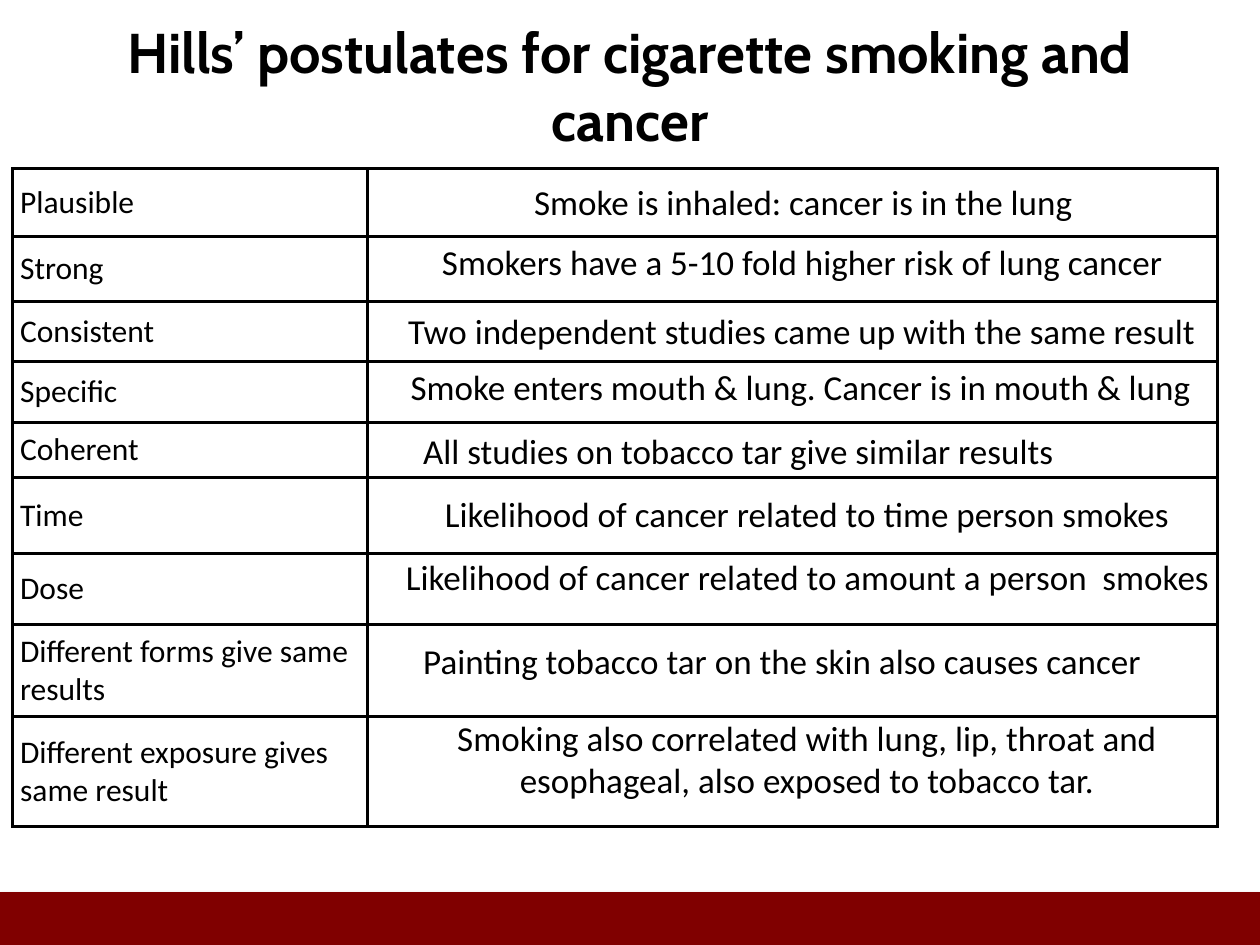
import pptx
import pptx.dml.color
import pptx.enum.shapes
import pptx.enum.text
import pptx.oxml
import pptx.oxml.ns
import pptx.util

Inches = pptx.util.Inches
Pt = pptx.util.Pt
ALIGN = pptx.enum.text.PP_ALIGN
ANCHOR = pptx.enum.text.MSO_ANCHOR

COLORS = {"text": "000000", "border": "000000", "paper": "FFFFFF", "footer": "800000"}
COLUMNS = [2.82, 6.74]
POSTULATES = [
    ("Plausible", 0.54),
    ("Strong", 0.51),
    ("Consistent", 0.48),
    ("Specific", 0.48),
    ("Coherent", 0.44),
    ("Time", 0.6),
    ("Dose", 0.57),
    ("Different forms give same results", 0.63),
    ("Different exposure gives same result", 0.87),
]
EVIDENCE = [
    ("Smoke is inhaled: cancer is in the lung", (4.14, 1.38, 4.52, 0.44), ALIGN.LEFT, False),
    ("Smokers have a 5-10 fold higher risk of lung cancer", (3.41, 1.86, 6, 0.44), ALIGN.LEFT, False),
    ("Two independent studies came up with the same result", (3.14, 2.41, 6.53, 0.44), ALIGN.LEFT, False),
    ("Smoke enters mouth & lung. Cancer is in mouth & lung", (3.16, 2.85, 6.49, 0.44), ALIGN.LEFT, True),
    ("All studies on tobacco tar give similar results", (3.26, 3.36, 6.29, 0.44), ALIGN.LEFT, True),
    ("Likelihood of cancer related to time person smokes", (3.26, 3.86, 6.29, 0.44), ALIGN.CENTER, True),
    ("Likelihood of cancer related to amount a person  smokes", (3.08, 4.36, 6.66, 0.44), ALIGN.CENTER, True),
    ("Painting tobacco tar on the skin also causes cancer", (3.26, 5.03, 6.29, 0.44), ALIGN.LEFT, True),
    ("Smoking also correlated with lung, lip, throat and esophageal, also exposed to tobacco tar.",
     (3.26, 5.64, 6.29, 0.77), ALIGN.CENTER, True),
]


def rgb(name):
    return pptx.dml.color.RGBColor.from_string(COLORS[name])


def write(tf, text, size=20, font="Calibri", color="text", bold=False, align=ALIGN.LEFT):
    p = tf.paragraphs[0]
    p.alignment = align
    r = p.add_run()
    r.text = text
    r.font.size = Pt(size)
    r.font.name = font
    r.font.bold = bold
    r.font.color.rgb = rgb(color)


class Deck:
    def __init__(self, s):
        self.s = s

    def title(self, text, box):
        sp = self.s.shapes.title
        sp.left, sp.top, sp.width, sp.height = map(Inches, box)
        tf = sp.text_frame
        tf.word_wrap = True
        tf.auto_size = pptx.enum.text.MSO_AUTO_SIZE.NONE
        tf.vertical_anchor = ANCHOR.MIDDLE
        write(tf, text, size=32, font="Cabin", bold=True, align=ALIGN.CENTER)

    def bar(self, box):
        sp = self.s.shapes.add_shape(pptx.enum.shapes.MSO_SHAPE.RECTANGLE, *map(Inches, box))
        sp.fill.solid()
        sp.fill.fore_color.rgb = rgb("footer")
        sp.line.fill.background()

    def text(self, text, box, align, wrap):
        tf = self.s.shapes.add_textbox(*map(Inches, box)).text_frame
        tf.word_wrap = wrap
        tf.auto_size = pptx.enum.text.MSO_AUTO_SIZE.SHAPE_TO_FIT_TEXT
        write(tf, text, align=align)

    def borders(self, cell):
        tc_pr = cell._tc.get_or_add_tcPr()
        for i, side in enumerate(("lnL", "lnR", "lnT", "lnB")):
            tc_pr.insert(i, pptx.oxml.parse_xml(
                f'<a:{side} {pptx.oxml.ns.nsdecls("a")} w="{Pt(2)}"><a:solidFill>'
                f'<a:srgbClr val="{COLORS["border"]}"/></a:solidFill></a:{side}>'))

    def table(self, rows, columns, left, top):
        heights = [height for _, height in rows]
        table = self.s.shapes.add_table(
            len(rows), len(columns), Inches(left), Inches(top),
            Inches(sum(columns)), Inches(sum(heights))).table
        table.first_row = table.horz_banding = False
        for column, width in zip(table.columns, columns):
            column.width = Inches(width)
        for row, (label, height) in zip(table.rows, rows):
            row.height = Inches(height)
            for cell in row.cells:
                cell.fill.solid()
                cell.fill.fore_color.rgb = rgb("paper")
                cell.vertical_anchor = ANCHOR.MIDDLE
                cell.margin_left = cell.margin_right = Inches(0.06)
                cell.margin_top = cell.margin_bottom = Inches(0.06)
                self.borders(cell)
            write(row.cells[0].text_frame, label, size=18)


def main():
    prs = pptx.Presentation()
    prs.slide_width, prs.slide_height = Inches(10), Inches(7.5)
    deck = Deck(prs.slides.add_slide(prs.slide_layouts[5]))
    deck.bar((0, 7.08, 10, 0.42))
    deck.title("Hills’ postulates for cigarette smoking and cancer", (0.5, 0.05, 9, 1.25))
    deck.table(POSTULATES, COLUMNS, 0.1, 1.34)
    for text, box, align, wrap in EVIDENCE:
        deck.text(text, box, align, wrap)
    prs.save("out.pptx")


if __name__ == "__main__":
    main()
